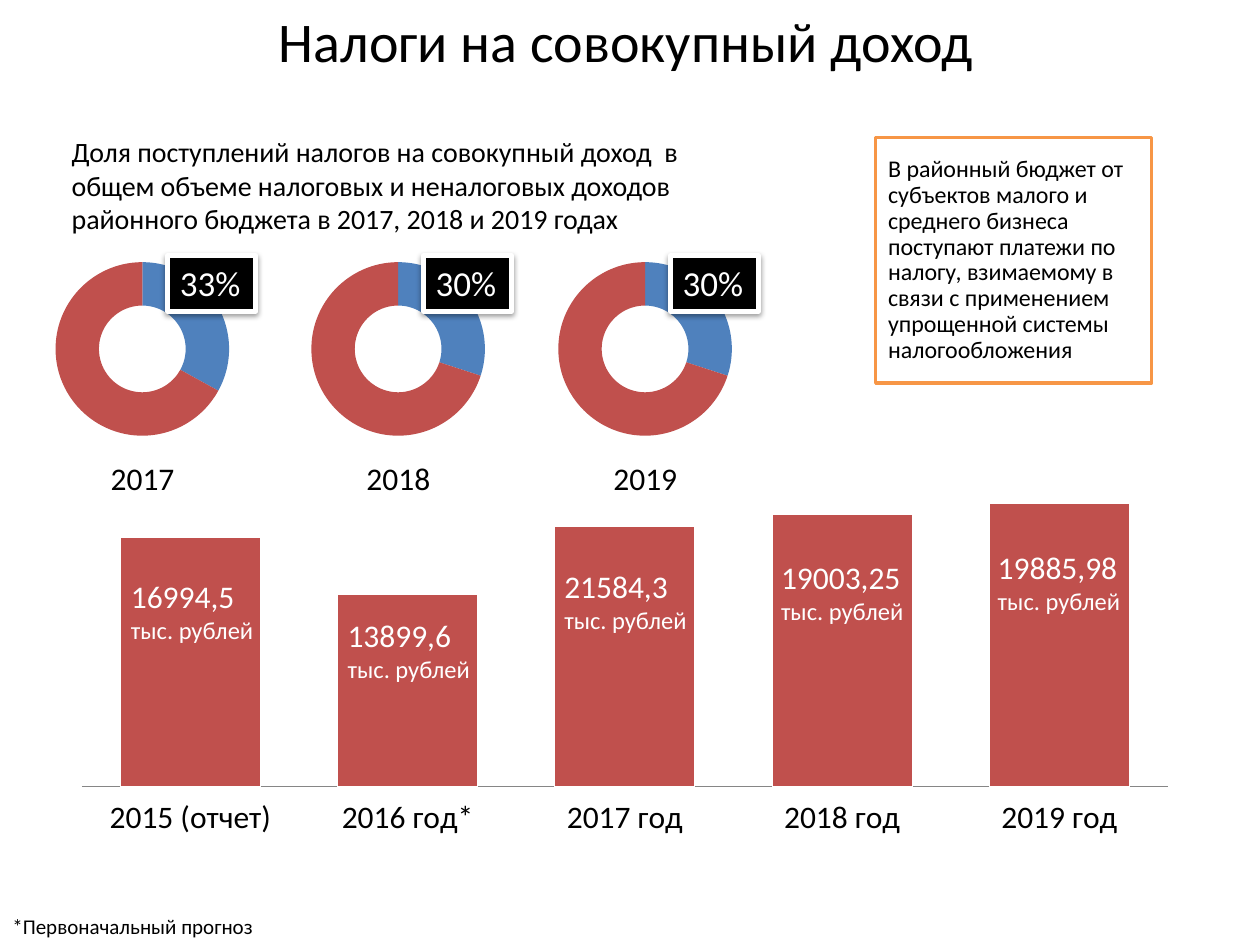
from lxml.etree import SubElement
from pptx import Presentation
from pptx.chart.data import CategoryChartData
from pptx.dml.color import RGBColor
from pptx.enum.chart import XL_CHART_TYPE, XL_TICK_LABEL_POSITION, XL_TICK_MARK
from pptx.enum.shapes import MSO_SHAPE
from pptx.enum.text import MSO_ANCHOR, MSO_AUTO_SIZE, PP_ALIGN
from pptx.oxml import parse_xml
from pptx.oxml.ns import nsdecls, qn
from pptx.util import Inches, Pt

# Content
TITLE = "Налоги на совокупный доход"
SHARE_HEADING = ("Доля поступлений налогов на совокупный доход  в общем объеме "
                 "налоговых и неналоговых доходов районного бюджета "
                 "в 2017, 2018 и 2019 годах")
EXPLANATION = ("В районный бюджет от субъектов малого и среднего бизнеса поступают "
               "платежи по налогу, взимаемому в связи с применением упрощенной "
               "системы налогообложения")
FOOTNOTE = "*Первоначальный прогноз"
UNIT = "тыс. рублей"
SHARES = [("2017", 33, 0.31), ("2018", 30, 2.34), ("2019", 30, 4.3)]  # year, %, left
# category, bar height, amount, top of the amount label
REVENUES = [
    ("2015 (отчет)", 88, "16994,5", 4.53),
    ("2016 год*", 68, "13899,6", 4.84),
    ("2017 год", 92, "21584,3", 4.45),
    ("2018 год", 96, "19003,25", 4.38),
    ("2019 год", 100, "19885,98", 4.3),
]

THEME = {
    "font": "Calibri",
    "black": RGBColor(0x00, 0x00, 0x00),
    "white": RGBColor(0xFF, 0xFF, 0xFF),
    "blue": RGBColor(0x4F, 0x81, 0xBD),
    "red": RGBColor(0xC0, 0x50, 0x4D),
    "orange": RGBColor(0xF7, 0x96, 0x46),
    "axis": RGBColor(0x86, 0x86, 0x86),
    "title": 32, "badge": 20, "label": 18, "heading": 16,
    "unit": 14, "body": 13.7, "note": 12,
}


def write(shape, *lines, color="black", align=PP_ALIGN.LEFT, anchor=MSO_ANCHOR.TOP,
          wrap=True, grow=True, spacing=None):
    """Fill a shape with (text, size name) lines."""
    frame = shape.text_frame
    frame.word_wrap = wrap
    frame.vertical_anchor = anchor
    frame.auto_size = MSO_AUTO_SIZE.SHAPE_TO_FIT_TEXT if grow else MSO_AUTO_SIZE.NONE
    for index, (text, size) in enumerate(lines):
        para = frame.add_paragraph() if index else frame.paragraphs[0]
        para.alignment = align
        if spacing:
            para.line_spacing = spacing
        span = para.add_run()
        span.text = text
        span.font.name = THEME["font"]
        span.font.size = Pt(THEME[size])
        span.font.color.rgb = THEME[color]


def add_text(page, place, *lines, **style):
    write(page.shapes.add_textbox(*map(Inches, place)), *lines, **style)


def add_box(page, place, fill, line, width):
    box = page.shapes.add_shape(MSO_SHAPE.RECTANGLE, *map(Inches, place))
    box.shadow.inherit = False
    box.fill.solid()
    box.fill.fore_color.rgb = THEME[fill]
    box.line.color.rgb = THEME[line]
    box.line.width = Pt(width)
    return box


def add_shadow(box):
    effects = box._element.spPr.find(qn("a:effectLst"))
    effects.append(parse_xml(
        f'<a:outerShdw {nsdecls("a")} blurRad="{Pt(3.1)}" dist="{Pt(1.6)}" '
        'dir="5400000" rotWithShape="0"><a:srgbClr val="000000">'
        '<a:alpha val="38000"/></a:srgbClr></a:outerShdw>'))


def add_chart(page, kind, place, categories, values, plot_area):
    """Add a one-series chart whose plot area is given in fractions."""
    data = CategoryChartData()
    data.categories = categories
    data.add_series("Series 1", values)
    chart = page.shapes.add_chart(kind, *map(Inches, place), data).chart
    chart.has_legend = False
    chart.has_title = False
    chart.font.name = THEME["font"]
    chart.font.size = Pt(THEME["label"])
    chart.font.color.rgb = THEME["black"]
    plot = chart._chartSpace.chart.plotArea
    for old in plot.findall(qn("c:layout")):
        plot.remove(old)
    layout = parse_xml(f'<c:layout {nsdecls("c")}><c:manualLayout/></c:layout>')
    settings = [("layoutTarget", "inner"), ("xMode", "edge"), ("yMode", "edge"),
                *zip("xywh", map(str, plot_area))]
    for name, value in settings:
        SubElement(layout[0], qn(f"c:{name}")).set("val", value)
    plot.insert(0, layout)
    return chart


def add_revenue_chart(page):
    chart = add_chart(page, XL_CHART_TYPE.COLUMN_STACKED, (0.47, 3.83, 8.98, 2.81),
                      [row[0] for row in REVENUES], [row[1] for row in REVENUES],
                      (0.02, 0.06, 0.96, 0.8))
    plot = chart.plots[0]
    plot.gap_width, plot.overlap, plot.vary_by_categories = 55, 100, False
    bars = plot.series[0].format
    bars.fill.solid()
    bars.fill.fore_color.rgb = THEME["red"]
    bars.line.color.rgb = THEME["white"]
    scale = chart.value_axis
    scale.minimum_scale, scale.maximum_scale = 0, 100
    scale.has_major_gridlines = False
    scale.visible = False
    years = chart.category_axis
    years.major_tick_mark = XL_TICK_MARK.NONE
    years.tick_label_position = XL_TICK_LABEL_POSITION.LOW
    years.format.line.color.rgb = THEME["axis"]


def add_share(page, year, percent, left):
    chart = add_chart(page, XL_CHART_TYPE.DOUGHNUT, (left, 1.95, 1.64, 1.64),
                      ["1", "2"], [percent, 100 - percent], (0.08, 0.08, 0.84, 0.84))
    chart.plots[0].vary_by_categories = True
    for index, color in enumerate(("blue", "red")):
        fill = chart.plots[0].series[0].points[index].format.fill
        fill.solid()
        fill.fore_color.rgb = THEME[color]
    badge = add_box(page, (left + 1.02, 2.03, 0.7, 0.44), "black", "white", 3)
    add_shadow(badge)
    write(badge, (f"{percent}%", "badge"), color="white")
    add_text(page, (left + 0.47, 3.59, 0.71, 0.4), (year, "label"), wrap=False)


def main():
    deck = Presentation()
    deck.slide_width, deck.slide_height = Inches(10), Inches(7.5)
    page = deck.slides.add_slide(deck.slide_layouts[5])

    # Title
    title = page.shapes.title
    title.left, title.top, title.width, title.height = map(Inches, (0.47, 0, 9, 0.64))
    write(title, (TITLE, "title"), align=PP_ALIGN.CENTER, anchor=MSO_ANCHOR.MIDDLE,
          grow=False)

    # Revenue columns with their amounts
    add_revenue_chart(page)
    for index, (_, _, amount, top) in enumerate(REVENUES):
        add_text(page, (0.94 + 1.72 * index, top, 1.18, 0.64),
                 (amount, "label"), (UNIT, "unit"), color="white", wrap=False)

    # Shares by year
    add_text(page, (0.47, 1.02, 5.55, 0.91), (SHARE_HEADING, "heading"))
    for share in SHARES:
        add_share(page, *share)

    # Explanation and footnote
    panel = add_box(page, (6.95, 1.09, 2.19, 1.95), "white", "orange", 2)
    write(panel, (EXPLANATION, "body"), anchor=MSO_ANCHOR.MIDDLE, grow=False, spacing=0.9)
    add_text(page, (0, 7.2, 2.73, 0.3), (FOOTNOTE, "note"))

    deck.save("out.pptx")


if __name__ == "__main__":
    main()
